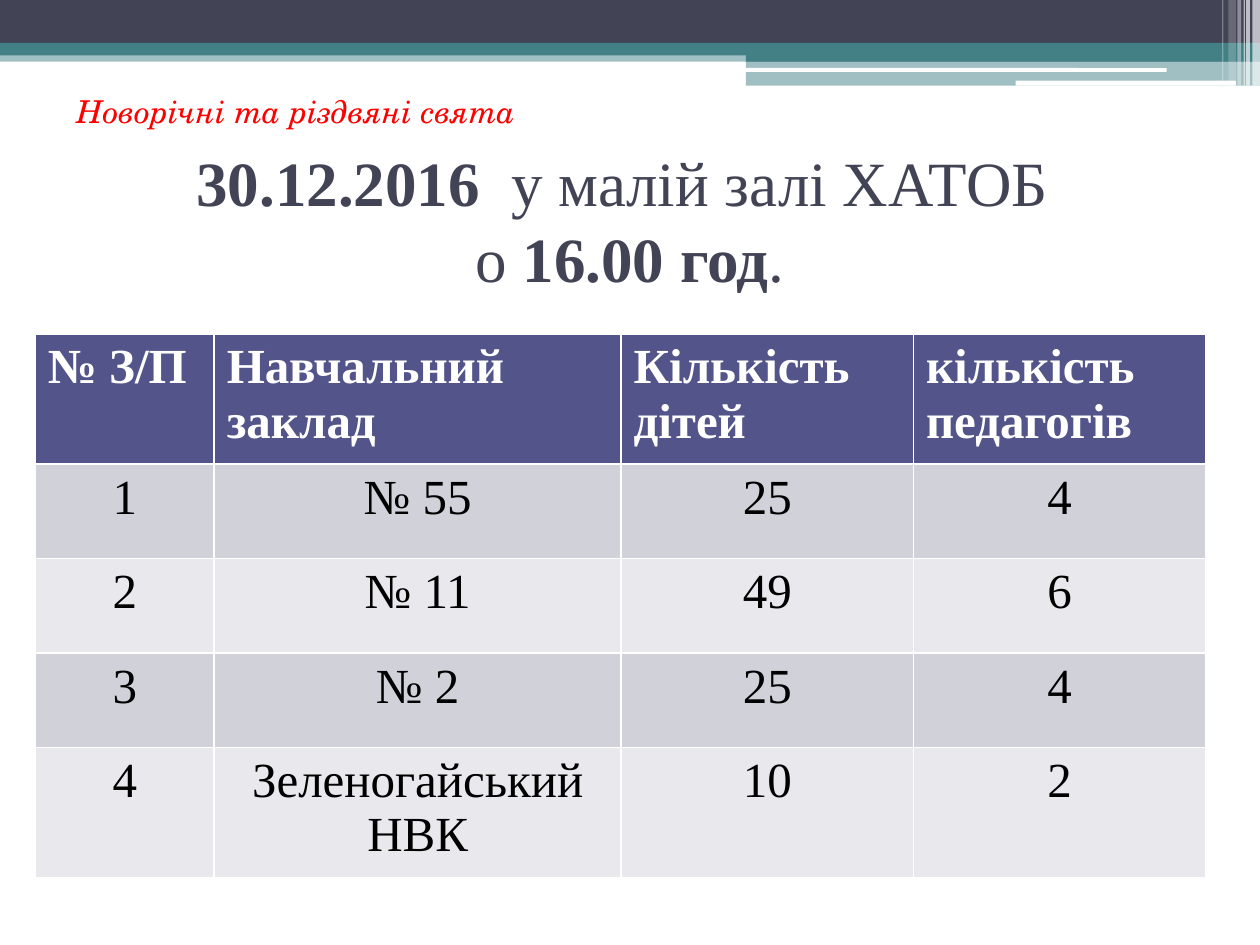
from lxml import etree
from pptx import Presentation
from pptx import util as u
from pptx.dml.color import RGBColor
from pptx.enum import shapes, text
from pptx.oxml.ns import qn

SERIF = "Times New Roman"
NAVY, TEAL, WHITE = "424456", "438086", "FFFFFF"
BANDS = [
    (0, 0.4, 10, 0.09, TEAL, 50),
    (0, 0, 10, 0.34, NAVY, 100),
    (0, 0.34, 10, 0.1, TEAL, 100),
    (5.92, 0.39, 4.08, 0.1, TEAL, 100),
    (5.92, 0.48, 4.08, 0.2, TEAL, 50),
]
ROUNDED_BARS = [(5.91, 0.54, 3.35, 0.03, WHITE, 100), (8.06, 0.64, 1.75, 0.04, WHITE, 100)]
STRIPES = [
    (9.94, 0, 0.06, 0.68, WHITE, 65),
    (9.89, 0, 0.03, 0.68, WHITE, 65),
    (9.87, 0, 0.01, 0.68, WHITE, 60),
    (9.82, 0, 0.03, 0.68, WHITE, 40),
    (9.75, 0, 0.06, 0.64, WHITE, 20),
    (9.7, 0, 0.01, 0.64, WHITE, 30),
]
TITLE_LINES = [
    [("30.12.2016", True), ("  у малій залі ХАТОБ ", False)],
    [("о ", False), ("16.00 год", True), (".", False)],
]
SUBJECT = "Новорічні та різдвяні свята"
COLUMN_WIDTHS = [1.42, 3.23, 2.32, 2.32]
ROW_HEIGHTS = [1.03, 0.75, 0.75, 0.75, 1.03]
ROWS = [
    ("№ З/П", "Навчальний заклад", "Кількість дітей", "кількість педагогів"),
    ("1", "№ 55", "25", "4"),
    ("2", "№ 11", "49", "6"),
    ("3", "№ 2", "25", "4"),
    ("4", "Зеленогайський НВК", "10", "2"),
]
HEADER_FILL, ROW_FILLS = "53548A", ["E9E9ED", "D1D1DA"]


def set_fill(target, color, opacity=100):
    """Give a shape or cell a solid fill, optionally see-through."""
    target.fill.solid()
    target.fill.fore_color.rgb = RGBColor.from_string(color)
    if opacity < 100:
        tone = target.fill._xPr.find(".//" + qn("a:srgbClr"))
        etree.SubElement(tone, qn("a:alpha"), val=str(opacity * 1000))


def style(span, font, size, color, bold=False, italic=False):
    """Format one run of text."""
    span.font.name, span.font.size = font, u.Pt(size)
    span.font.bold, span.font.italic = bold, italic
    span.font.color.rgb = RGBColor.from_string(color)


def add_bars(slide, kind, bars):
    """Draw the plain bars of the header decoration."""
    for left, top, width, height, color, opacity in bars:
        bar = slide.shapes.add_shape(kind, *map(u.Inches, (left, top, width, height)))
        bar.shadow.inherit = False
        bar.line.fill.background()
        set_fill(bar, color, opacity)


def add_heading(slide):
    """Fill the title placeholder and the subject line above it."""
    title = slide.shapes.title
    title.left, title.top, title.width, title.height = map(u.Inches, (0.5, 1.07, 9, 1.34))
    title.text_frame.vertical_anchor = text.MSO_ANCHOR.MIDDLE
    para = title.text_frame.paragraphs[0]
    para.alignment = text.PP_ALIGN.CENTER
    para.line_spacing = u.Pt(43.5)
    for number, line in enumerate(TITLE_LINES):
        if number:
            para.add_line_break()
        for words, bold in line:
            span = para.add_run()
            span.text = words
            style(span, SERIF, 36, NAVY, bold)
    box = slide.shapes.add_textbox(*map(u.Inches, (0.51, 0.68, 9.21, 0.4)))
    box.text_frame.word_wrap = True
    box.text_frame.text = SUBJECT
    style(box.text_frame.paragraphs[0].runs[0], "TeX Gyre Schola", 18, "FF0000", italic=True)


def add_schools(slide):
    """Add the table of schools with its header and banded rows."""
    frame = slide.shapes.add_table(
        len(ROWS), len(COLUMN_WIDTHS), u.Inches(0.28), u.Inches(2.65),
        u.Inches(sum(COLUMN_WIDTHS)), u.Inches(sum(ROW_HEIGHTS)))
    table = frame.table
    for column, width in zip(table.columns, COLUMN_WIDTHS):
        column.width = u.Inches(width)
    for number, (row, height, values) in enumerate(zip(table.rows, ROW_HEIGHTS, ROWS)):
        row.height = u.Inches(height)
        header = number == 0
        for cell, value in zip(row.cells, values):
            set_fill(cell, HEADER_FILL if header else ROW_FILLS[number % 2])
            cell.text_frame.text = value
            para = cell.text_frame.paragraphs[0]
            para.alignment = text.PP_ALIGN.LEFT if header else text.PP_ALIGN.CENTER
            style(para.runs[0], SERIF, 28, WHITE if header else "000000", header)


def main():
    """Build the slide and save it."""
    deck = Presentation()
    deck.slide_width, deck.slide_height = u.Inches(10), u.Inches(7.5)
    slide = deck.slides.add_slide(deck.slide_layouts[5])
    add_bars(slide, shapes.MSO_SHAPE.RECTANGLE, BANDS)
    add_bars(slide, shapes.MSO_SHAPE.ROUNDED_RECTANGLE, ROUNDED_BARS)
    add_bars(slide, shapes.MSO_SHAPE.RECTANGLE, STRIPES)
    add_heading(slide)
    add_schools(slide)
    deck.save("out.pptx")


if __name__ == "__main__":
    main()
